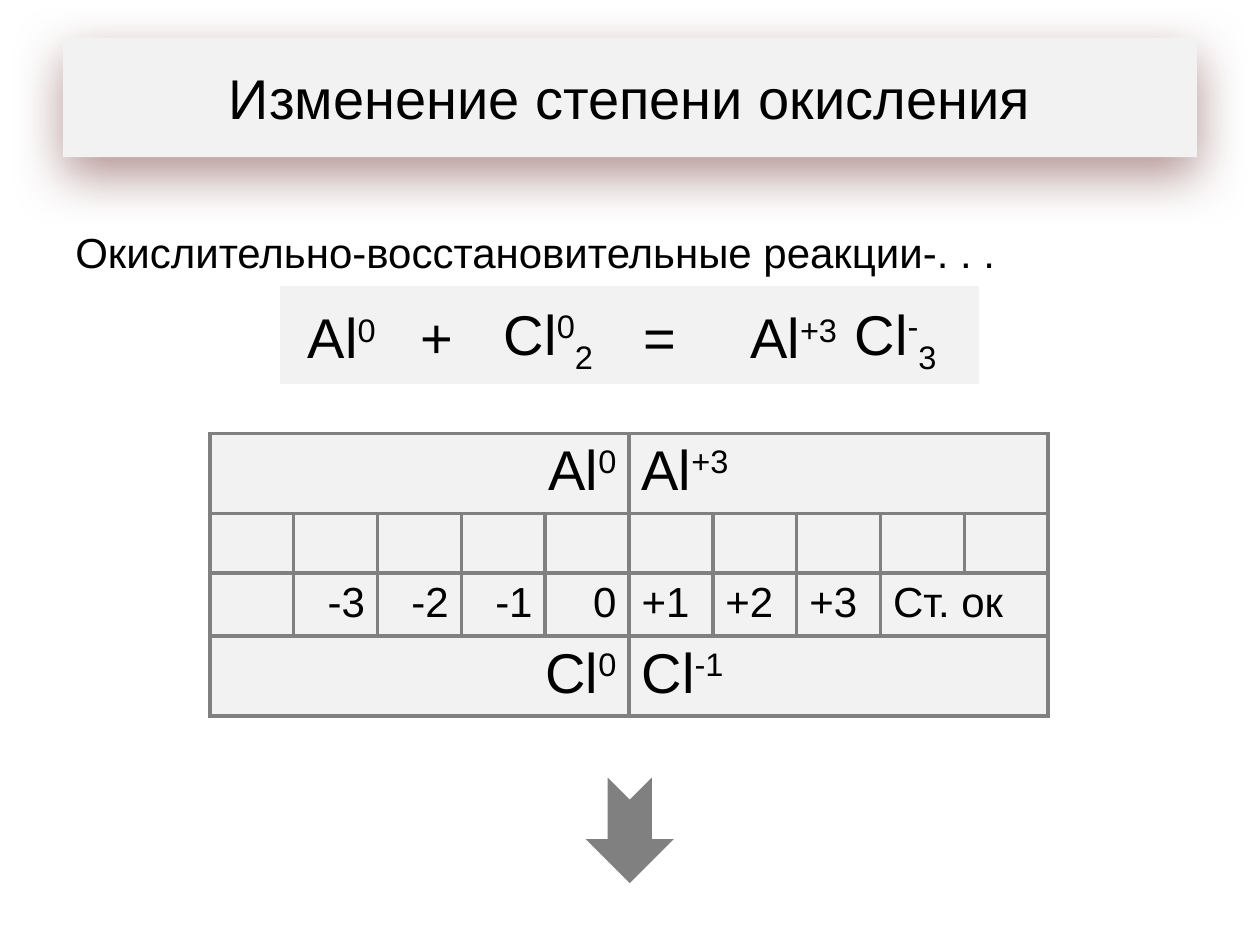
"""Builds a slide about changes of oxidation state in a redox reaction."""
import pptx
import pptx.dml.color
import pptx.enum.shapes
import pptx.enum.text
import pptx.oxml
import pptx.oxml.ns
import pptx.util

Cm = pptx.util.Cm
ALIGN = pptx.enum.text.PP_ALIGN
SHAPES = pptx.enum.shapes.MSO_SHAPE
MIDDLE = pptx.enum.text.MSO_ANCHOR.MIDDLE

COLORS = {"panel": "F2F2F2", "text": "000000", "line": "808080", "shadow": "632523"}
FONT = "Arial"
NO_STYLE = "{2D5ABB26-0587-4C30-8999-92F81FD0307C}"
SUPER, SUB = 30, -25
LARGE, MEDIUM = 32, 24

TITLE = [("Изменение степени окисления", 0)]
LEAD = [("Окислительно-восстановительные реакции-. . .", 0)]

EQUATION_WIDTHS = [2.11, 2.11, 2.39, 2.11, 2.69, 2.69]
EQUATION = [
    ([("Al", 0), ("0", SUPER)], ALIGN.RIGHT),
    ([("+", 0)], ALIGN.CENTER),
    ([("Cl", 0), ("0", SUPER), ("2", SUB)], ALIGN.CENTER),
    ([("=", 0)], ALIGN.CENTER),
    ([("Al", 0), ("+3", SUPER)], ALIGN.RIGHT),
    ([("Cl", 0), ("-", SUPER), ("3", SUB)], ALIGN.LEFT),
]

SCALE_COLUMNS = 10
HALF = SCALE_COLUMNS // 2
SCALE_HEIGHTS = [1.51, 1.2, 1.2, 1.51]
ELEMENT_ROWS = {0: ("Al", "0", "+3"), 3: ("Cl", "0", "-1")}
STATE_ROW = 2
STATES = ["", "-3", "-2", "-1", "0", "+1", "+2", "+3", "Ст. ок"]


def color(name):
    return pptx.dml.color.RGBColor.from_string(COLORS[name])


def write(frame, runs, size, align=ALIGN.LEFT, spacing=None):
    para = frame.paragraphs[0]
    para.alignment = align
    para.line_spacing = spacing
    for text, baseline in runs:
        span = para.add_run()
        span.text = text
        span.font.name = FONT
        span.font.size = pptx.util.Pt(size)
        span.font.color.rgb = color("text")
        if baseline:
            span.font._element.set("baseline", str(baseline * 1000))


def add_panel(slide, kind, place, fill):
    shape = slide.shapes.add_shape(kind, *map(Cm, place))
    shape.shadow.inherit = False
    shape.fill.solid()
    shape.fill.fore_color.rgb = color(fill)
    shape.line.fill.background()
    return shape


def add_glow(shape):
    effects = shape._element.spPr.find(pptx.oxml.ns.qn("a:effectLst"))
    effects.append(pptx.oxml.parse_xml(
        f'<a:outerShdw {pptx.oxml.ns.nsdecls("a")} blurRad="{pptx.util.Pt(30)}" '
        f'dist="{pptx.util.Pt(10)}" dir="5400000" rotWithShape="0">'
        f'<a:srgbClr val="{COLORS["shadow"]}"><a:alpha val="50000"/></a:srgbClr>'
        '</a:outerShdw>'))


def add_border(cell):
    properties = cell._tc.get_or_add_tcPr()
    for side in ("lnL", "lnR", "lnT", "lnB"):
        properties.append(pptx.oxml.parse_xml(
            f'<a:{side} {pptx.oxml.ns.nsdecls("a")} w="{pptx.util.Pt(2.25)}">'
            f'<a:solidFill><a:srgbClr val="{COLORS["line"]}"/></a:solidFill></a:{side}>'))


def add_grid(slide, left, top, widths, heights, bordered):
    frame = slide.shapes.add_table(
        len(heights), len(widths), Cm(left), Cm(top), Cm(sum(widths)), Cm(sum(heights)))
    table = frame.table
    table.first_row = table.horz_banding = False
    table._tbl.tblPr.find(pptx.oxml.ns.qn("a:tableStyleId")).text = NO_STYLE
    for column, width in zip(table.columns, widths):
        column.width = Cm(width)
    for row, height in zip(table.rows, heights):
        row.height = Cm(height)
    for cell in table.iter_cells():
        if bordered:
            add_border(cell)
        cell.fill.solid()
        cell.fill.fore_color.rgb = color("panel")
    return table


def add_scale(slide):
    table = add_grid(slide, 4.23, 8.74, [1.69] * SCALE_COLUMNS, SCALE_HEIGHTS, True)
    for row, (element, before, after) in ELEMENT_ROWS.items():
        halves = [(0, before, ALIGN.RIGHT), (HALF, after, ALIGN.LEFT)]
        for start, state, align in halves:
            cell = table.cell(row, start)
            cell.merge(table.cell(row, start + HALF - 1))
            write(cell.text_frame, [(element, 0), (state, SUPER)], LARGE, align)
    last = len(STATES) - 1
    table.cell(STATE_ROW, last).merge(table.cell(STATE_ROW, SCALE_COLUMNS - 1))
    for column, state in enumerate(STATES):
        if state:
            align = ALIGN.RIGHT if column < HALF else ALIGN.LEFT
            write(table.cell(STATE_ROW, column).text_frame, [(state, 0)], MEDIUM, align)


def add_equation(slide):
    table = add_grid(slide, 5.64, 5.76, EQUATION_WIDTHS, [1.98], False)
    for cell, (runs, align) in zip(table.iter_cells(), EQUATION):
        cell.vertical_anchor = MIDDLE
        cell.margin_left = cell.margin_right = Cm(0.18)
        cell.margin_top = cell.margin_bottom = Cm(0)
        write(cell.text_frame, runs, LARGE, align, 1.15)


def main():
    deck = pptx.Presentation()
    deck.slide_width, deck.slide_height = Cm(25.4), Cm(19.05)
    slide = deck.slides.add_slide(deck.slide_layouts[6])

    title = add_panel(slide, SHAPES.RECTANGLE, (1.27, 0.76, 22.86, 2.41), "panel")
    add_glow(title)
    title.text_frame.word_wrap = True
    title.text_frame.vertical_anchor = MIDDLE
    write(title.text_frame, TITLE, LARGE, ALIGN.CENTER)

    lead = slide.shapes.add_textbox(Cm(1.27), Cm(4.45), Cm(22.86), Cm(2.69))
    lead.text_frame.word_wrap = True
    write(lead.text_frame, LEAD, MEDIUM)

    add_scale(slide)
    add_equation(slide)

    arrow = add_panel(slide, SHAPES.NOTCHED_RIGHT_ARROW, (11.63, 15.85, 2.13, 1.78), "line")
    arrow.rotation = 90
    deck.save("out.pptx")


if __name__ == "__main__":
    main()
